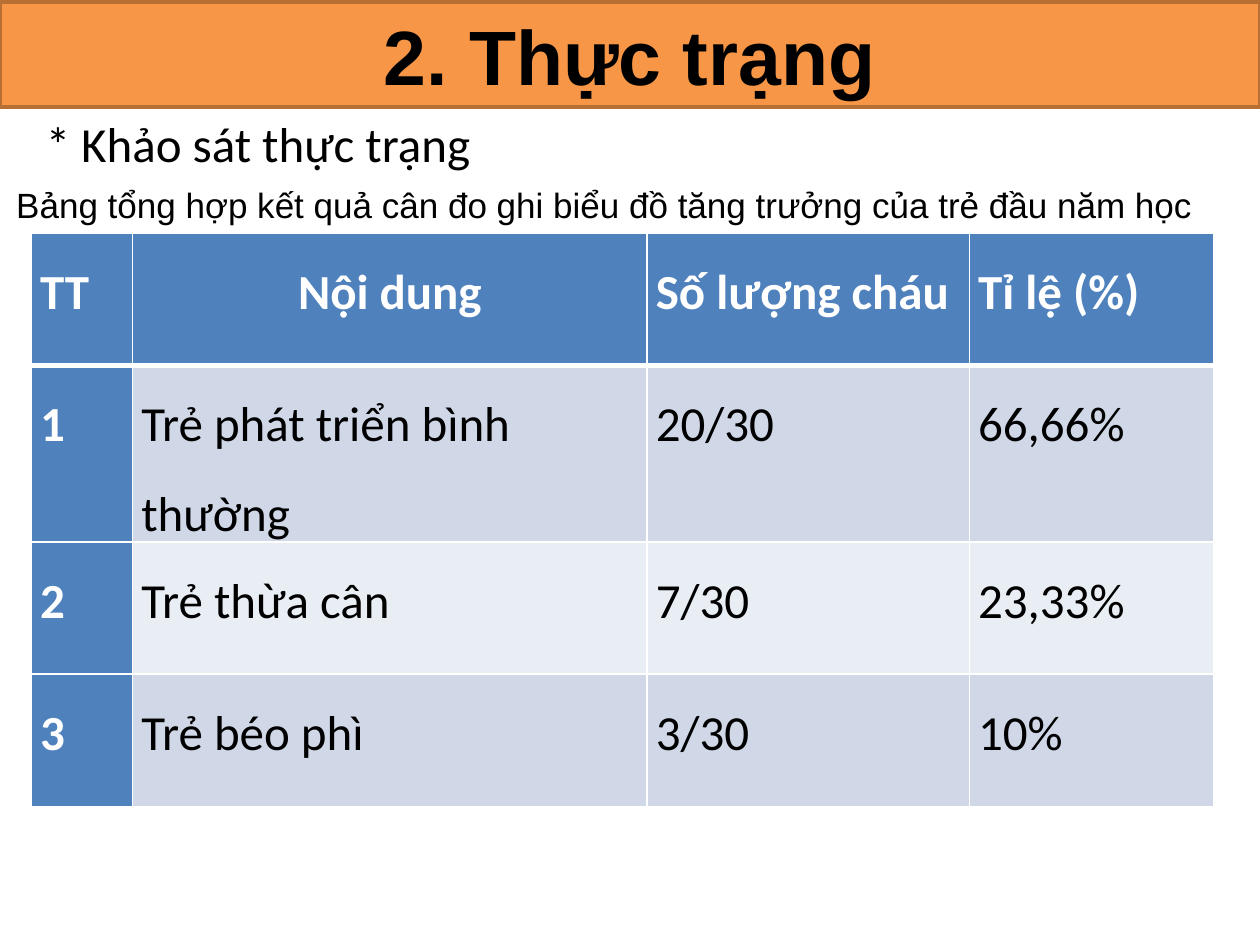
from lxml.etree import SubElement
from pptx import Presentation
from pptx.dml.color import RGBColor
from pptx.enum.shapes import MSO_SHAPE
from pptx.enum.text import MSO_ANCHOR, MSO_AUTO_SIZE, PP_ALIGN
from pptx.oxml.ns import qn
from pptx.util import Pt


def color(value):
    return RGBColor.from_string(value)


def apply(target, values):
    for name, value in values.items():
        setattr(target, name, value)


class SlideBuilder:
    black, white = "000000", "FFFFFF"
    accent, accent_line = "F79646", "B76F34"
    heading_fill = "4F81BD"
    bands = ("D0D8E8", "E9EDF4")
    cell_format = {
        "margin_left": Pt(5),
        "margin_right": Pt(5),
        "margin_top": Pt(0),
        "margin_bottom": Pt(0),
    }
    cell_paragraph = {"line_spacing": 1.5, "space_after": Pt(6)}

    def __init__(self, slide):
        self.slide = slide

    def set_text(self, frame, text, ink, font, paragraph_format):
        frame.text = text
        paragraph = frame.paragraphs[0]
        apply(paragraph, paragraph_format)
        apply(paragraph.font, font)
        paragraph.font.color.rgb = color(ink)

    def banner(self, box, text, font):
        banner = self.slide.shapes.add_shape(MSO_SHAPE.RECTANGLE, *map(Pt, box))
        banner.shadow.inherit = False
        banner.fill.solid()
        banner.fill.fore_color.rgb = color(self.accent)
        banner.line.color.rgb = color(self.accent_line)
        banner.line.width = Pt(2)
        banner.text_frame.vertical_anchor = MSO_ANCHOR.MIDDLE
        self.set_text(banner.text_frame, text, self.black, font, {"alignment": PP_ALIGN.CENTER})

    def text(self, box, text, font, frame_format, paragraph_format):
        frame = self.slide.shapes.add_textbox(*map(Pt, box)).text_frame
        apply(frame, {"auto_size": MSO_AUTO_SIZE.SHAPE_TO_FIT_TEXT, **frame_format})
        self.set_text(frame, text, self.black, font, paragraph_format)

    def borders(self, cell, widths):
        properties = cell._tc.get_or_add_tcPr()
        for side, width in widths.items():
            line = SubElement(properties, qn(f"a:ln{side}"), w=str(Pt(width)))
            fill = SubElement(line, qn("a:solidFill"))
            SubElement(fill, qn("a:srgbClr"), val=self.white)

    def table(self, box, widths, heights, rows, font):
        table = self.slide.shapes.add_table(len(rows), len(widths), *map(Pt, box)).table
        table.first_col = True
        for column, width in zip(table.columns, widths):
            column.width = Pt(width)
        for row, height in zip(table.rows, heights):
            row.height = Pt(height)
        for r, texts in enumerate(rows):
            for c, text in enumerate(texts):
                heading = r == 0 or c == 0
                cell = table.cell(r, c)
                apply(cell, self.cell_format)
                top, bottom = (3 if r == 1 else 1), (3 if r == 0 else 1)
                self.borders(cell, {"L": 1, "R": 1, "T": top, "B": bottom})
                cell.fill.solid()
                cell.fill.fore_color.rgb = color(
                    self.heading_fill if heading else self.bands[(r - 1) % 2]
                )
                centered = r == 0 and c == 1
                self.set_text(
                    cell.text_frame,
                    text,
                    self.white if heading else self.black,
                    {**font, "bold": heading},
                    {
                        **self.cell_paragraph,
                        "alignment": PP_ALIGN.CENTER if centered else PP_ALIGN.LEFT,
                    },
                )


def main():
    presentation = Presentation()
    apply(presentation, {"slide_width": Pt(720), "slide_height": Pt(540)})
    builder = SlideBuilder(presentation.slides.add_slide(presentation.slide_layouts[6]))
    body_font = {"name": "Calibri", "size": Pt(28)}

    builder.banner(
        (0, 1.2, 720, 60),
        "2. Thực trạng",
        {"name": "Arial", "size": Pt(44), "bold": True},
    )
    builder.text(
        (0, 61.2, 720, 75),
        "* Khảo sát thực trạng",
        body_font,
        {"word_wrap": True, "margin_left": Pt(26.2)},
        {"alignment": PP_ALIGN.LEFT},
    )
    survey = [
        ("TT", "Nội dung", "Số lượng cháu", "Tỉ lệ (%)"),
        ("1", "Trẻ phát triển bình thường", "20/30", "66,66%"),
        ("2", "Trẻ thừa cân", "7/30", "23,33%"),
        ("3", "Trẻ béo phì", "3/30", "10%"),
    ]
    builder.table(
        (18, 133.2, 675.6, 303),
        (57.8, 294, 184.2, 139.6),
        (75.6, 76.3, 75.6, 75.6),
        survey,
        body_font,
    )
    builder.text(
        (2.2, 100.8, 691.2, 31.7),
        "Bảng tổng hợp kết quả cân đo ghi biểu đồ tăng trưởng của trẻ đầu năm học",
        {"name": "Arial", "size": Pt(20)},
        {"word_wrap": False, "vertical_anchor": MSO_ANCHOR.MIDDLE},
        {"alignment": PP_ALIGN.JUSTIFY},
    )
    presentation.save("out.pptx")


if __name__ == "__main__":
    main()
